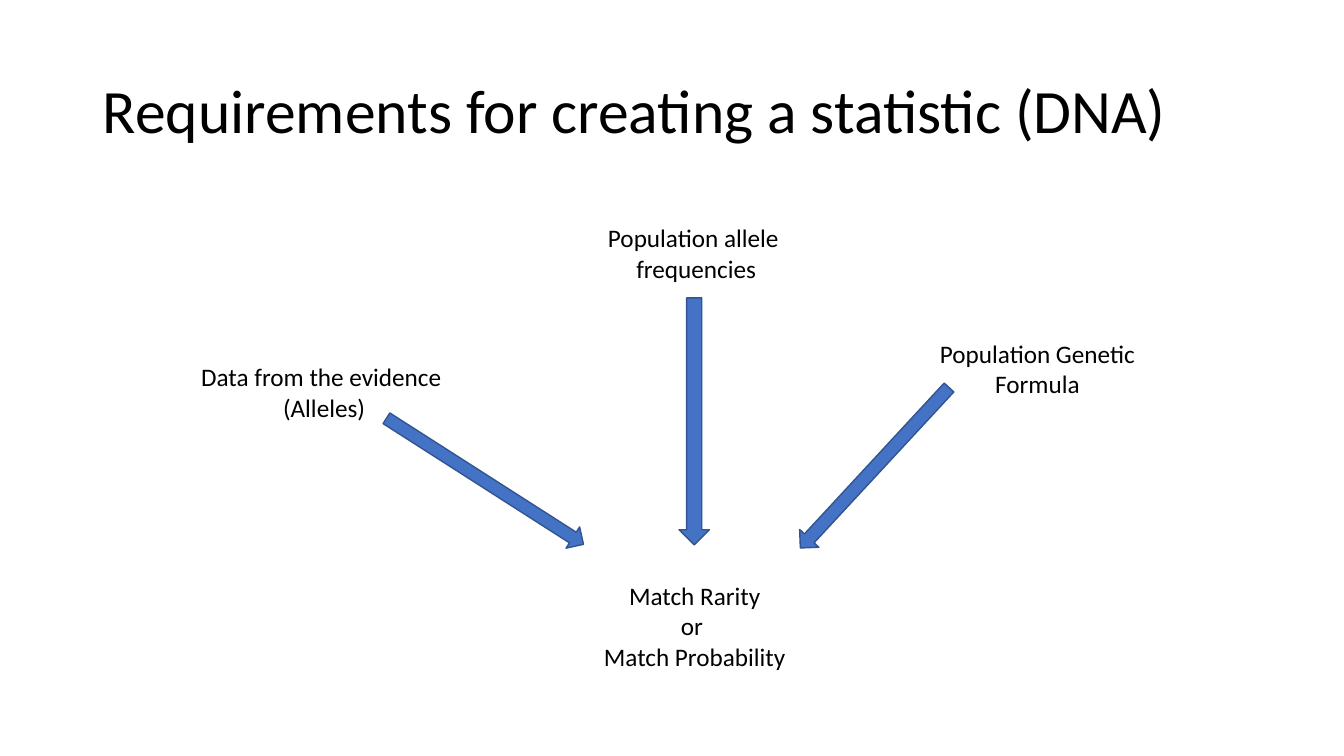
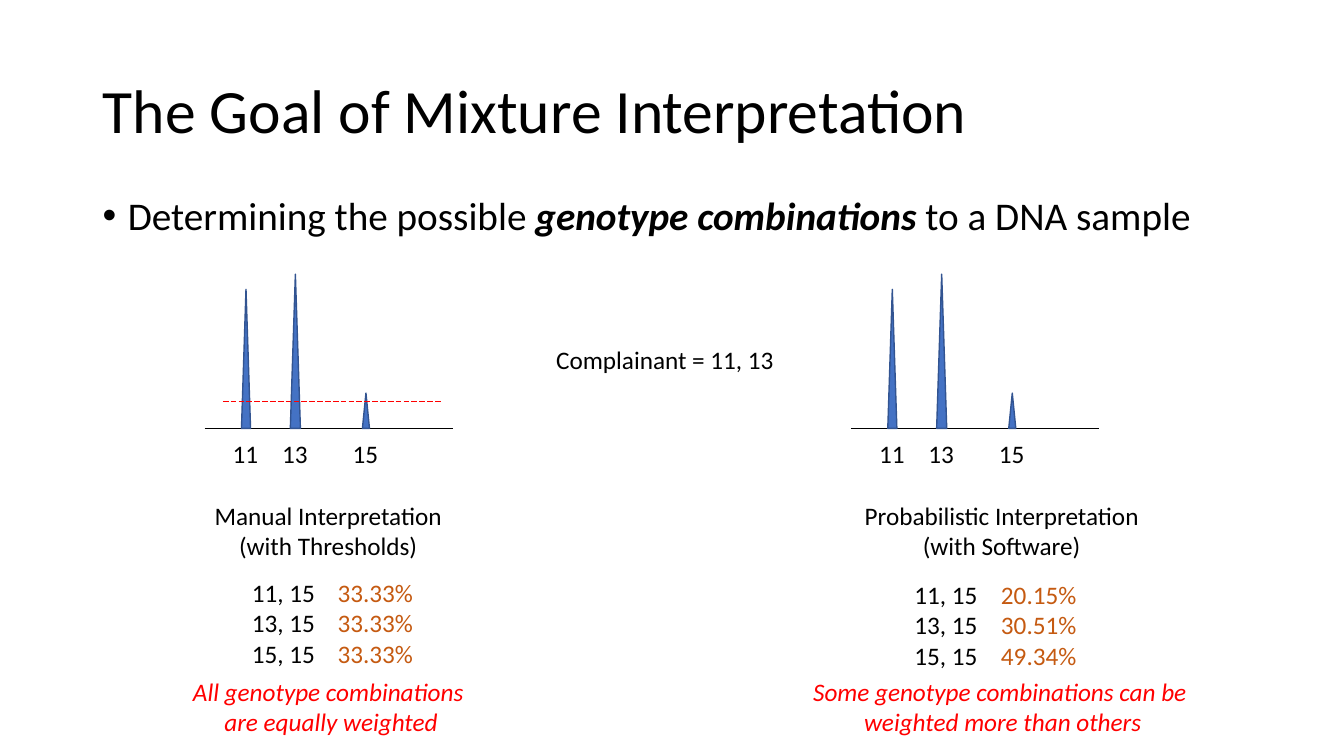
import pptx
import pptx.dml.color
import pptx.enum.dml
import pptx.enum.shapes
import pptx.enum.text
import pptx.oxml
import pptx.oxml.ns
import pptx.util

Inches = pptx.util.Inches
Pt = pptx.util.Pt
RGBColor = pptx.dml.color.RGBColor
Align = pptx.enum.text.PP_ALIGN
Anchor = pptx.enum.text.MSO_ANCHOR
AutoSize = pptx.enum.text.MSO_AUTO_SIZE
Preset = pptx.enum.shapes.MSO_SHAPE
Dash = pptx.enum.dml.MSO_LINE

BLACK = RGBColor(0x00, 0x00, 0x00)
RED = RGBColor(0xFF, 0x00, 0x00)
ORANGE = RGBColor(0xC5, 0x5A, 0x11)
BLUE = RGBColor(0x44, 0x72, 0xC4)
DARK_BLUE = RGBColor(0x32, 0x54, 0x91)

FONT = "Calibri"
TITLE_ONLY_LAYOUT = 5
BULLET_INDENT = Inches(0.25)


class Deck:
    """Holds the shared style, the presentation and the current slide."""

    def __init__(self):
        self.presentation = pptx.Presentation()
        self.presentation.slide_width = Inches(13.33)
        self.presentation.slide_height = Inches(7.5)
        self.slide = None

    def add_slide(self, title):
        layout = self.presentation.slide_layouts[TITLE_ONLY_LAYOUT]
        self.slide = self.presentation.slides.add_slide(layout)
        placeholder = self.slide.shapes.title
        self.place(placeholder, 0.92, 0.4, 11.5, 1.45)
        frame = placeholder.text_frame
        frame.auto_size = AutoSize.NONE
        frame.vertical_anchor = Anchor.MIDDLE
        paragraph = frame.paragraphs[0]
        paragraph.alignment = Align.LEFT
        paragraph.line_spacing = 0.9
        self.run(paragraph, title, size=Pt(44))

    def place(self, shape, left, top, width, height):
        box = {"left": left, "top": top, "width": width, "height": height}
        for name, length in box.items():
            setattr(shape, name, Inches(length))

    def run(self, paragraph, text, color=BLACK, **font_format):
        run = paragraph.add_run()
        run.text = text
        values = {"name": FONT, "size": Pt(18), **font_format}
        for name, value in values.items():
            setattr(run.font, name, value)
        run.font.color.rgb = color

    def label(self, lines, left, top, width, alignment=Align.CENTER,
              shapes=None, **font_format):
        """Add an unwrapped text box, one paragraph a line, as tall as its lines."""
        height = 0.1 + 0.3 * len(lines)
        shapes = shapes or self.slide.shapes
        box = shapes.add_textbox(*map(Inches, (left, top, width, height)))
        frame = box.text_frame
        frame.word_wrap = False
        frame.auto_size = AutoSize.SHAPE_TO_FIT_TEXT
        for index, line in enumerate(lines):
            paragraph = frame.add_paragraph() if index else frame.paragraphs[0]
            paragraph.alignment = alignment
            self.run(paragraph, line, **font_format)

    def bullet(self, pieces, left, top, width, height):
        """Add one bulleted paragraph from (text, font format) pieces."""
        box = self.slide.shapes.add_textbox(
            *map(Inches, (left, top, width, height)))
        box.text_frame.word_wrap = True
        paragraph = box.text_frame.paragraphs[0]
        paragraph.line_spacing = 0.9
        paragraph.space_before = Pt(10)
        for text, font_format in pieces:
            self.run(paragraph, text, size=Pt(28), **font_format)
        properties = paragraph._p.get_or_add_pPr()
        properties.set("marL", str(BULLET_INDENT))
        properties.set("indent", str(-BULLET_INDENT))
        for tag, name, value in (("a:buFont", "typeface", "Arial"),
                                 ("a:buChar", "char", "•")):
            element = pptx.oxml.parse_xml(
                f"<{tag} {pptx.oxml.ns.nsdecls('a')}/>")
            element.set(name, value)
            properties.append(element)

    def blue_shape(self, preset, left, top, width, height,
                   rotation=0, shapes=None):
        shapes = shapes or self.slide.shapes
        shape = shapes.add_shape(
            preset, *map(Inches, (left, top, width, height)))
        shape.rotation = rotation
        shape.shadow.inherit = False
        shape.fill.solid()
        shape.fill.fore_color.rgb = BLUE
        shape.line.color.rgb = DARK_BLUE
        shape.line.width = Pt(1)

    def horizontal_line(self, left, right, y, color, shapes, dash=None):
        connector = shapes.add_connector(
            pptx.enum.shapes.MSO_CONNECTOR.STRAIGHT,
            *map(Inches, (left, y, right, y)))
        connector.line.color.rgb = color
        connector.line.width = Pt(0.5)
        if dash is not None:
            connector.line.dash_style = dash
        connector._element.spPr.append(pptx.oxml.parse_xml(
            f"<a:effectLst {pptx.oxml.ns.nsdecls('a')}/>"))

    def peaks(self, left, has_threshold=False):
        """Draw a grouped electropherogram whose baseline starts at left."""
        baseline = 4.25
        shapes = self.slide.shapes.add_group_shape().shapes
        self.horizontal_line(left, left + 2.46, baseline, BLACK, shapes)
        for allele, offset, width, height in (("11", 0.41, 0.09, 1.38),
                                              ("13", 0.9, 0.1, 1.53),
                                              ("15", 1.6, 0.07, 0.35)):
            center = left + offset
            self.blue_shape(Preset.ISOSCELES_TRIANGLE, center - width / 2,
                            baseline - height, width, height, shapes=shapes)
            self.label([allele], center - 0.23, baseline + 0.05, 0.46,
                       alignment=Align.LEFT, shapes=shapes)
        if has_threshold:
            self.horizontal_line(left + 0.18, left + 2.34, 3.98, RED, shapes,
                                 dash=Dash.LONG_DASH)


def build_requirements(deck):
    deck.add_slide("Requirements for creating a statistic (DNA)")
    for lines, left, top, width in (
            (["Data from the evidence ", "(Alleles)"], 1.88, 3.54, 2.67),
            (["Population allele ", "frequencies"], 5.92, 2.16, 1.97),
            (["Population Genetic", "Formula"], 9.21, 3.31, 2.16),
            (["Match Rarity", "or ", "Match Probability"], 5.88, 5.71, 2.02)):
        deck.label(lines, left, top, width)
    for left, top, width, height, rotation in (
            (3.65, 4.65, 2.32, 0.25, 32.6),
            (7.59, 4.51, 2.17, 0.26, 132.8),
            (5.66, 4.03, 2.45, 0.3, 90)):
        deck.blue_shape(Preset.RIGHT_ARROW, left, top, width, height, rotation)


def build_mixture_goal(deck):
    deck.add_slide("The Goal of Mixture Interpretation")
    deck.bullet([("Determining the possible ", {}),
                 ("genotype combinations ", {"bold": True, "italic": True}),
                 ("to a DNA sample", {})], 0.92, 1.9, 11.5, 0.6)
    deck.peaks(2.03, has_threshold=True)
    deck.peaks(8.44)
    deck.label(["Complainant = 11, 13"], 5.4, 3.37, 2.39)

    deck.label(["Manual Interpretation", "(with Thresholds)"], 1.99, 4.91, 2.53)
    deck.label(["Probabilistic Interpretation", "(with Software)"],
               8.4, 4.91, 3.07)

    genotypes = ["11, 15", "13, 15", "15, 15"]
    for left, width, top, weight_left, weights in (
            (2.4, 0.83, 5.68, 3.25, ["33.33%"] * 3),
            (8.97, 1.01, 5.7, 9.83, ["20.15%", "30.51%", "49.34%"])):
        deck.label(genotypes, left, top, width, alignment=Align.LEFT)
        deck.label(weights, weight_left, top, 0.96, alignment=Align.LEFT,
                   color=ORANGE)

    for lines, left, width in (
            (["All genotype combinations ", "are equally weighted"], 1.8, 2.97),
            (["Some genotype combinations can be ",
              "weighted more than others"], 7.94, 4.01)):
        deck.label(lines, left, 6.66, width, color=RED, italic=True)


def main():
    deck = Deck()
    build_requirements(deck)
    build_mixture_goal(deck)
    deck.presentation.save("out.pptx")


if __name__ == "__main__":
    main()
